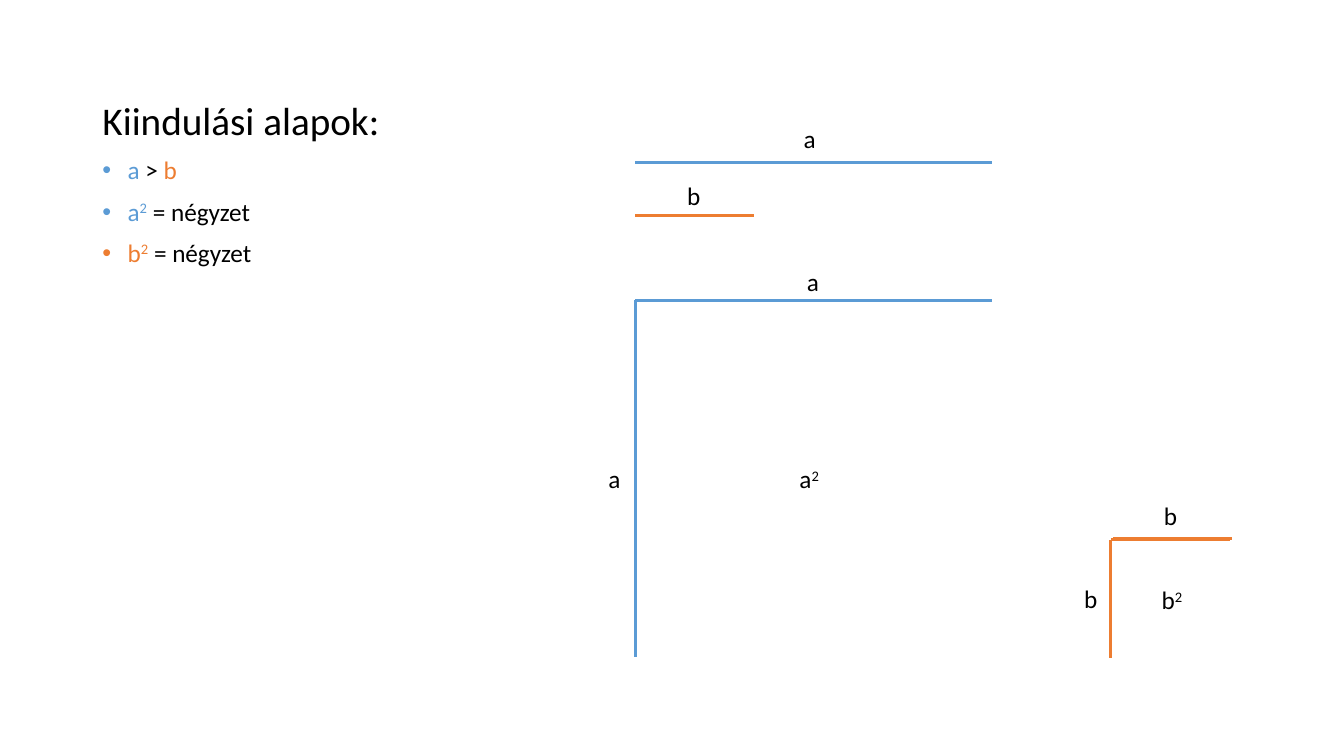
from dataclasses import dataclass

from lxml import etree
from pptx import Presentation
from pptx.dml.color import RGBColor
from pptx.enum.shapes import MSO_CONNECTOR
from pptx.enum.text import MSO_ANCHOR, MSO_AUTO_SIZE, PP_ALIGN
from pptx.oxml.ns import qn
from pptx.util import Pt

STRAIGHT = MSO_CONNECTOR.STRAIGHT
LEFT = PP_ALIGN.LEFT
TOP = MSO_ANCHOR.TOP
NO_FIT, GROW = MSO_AUTO_SIZE.NONE, MSO_AUTO_SIZE.SHAPE_TO_FIT_TEXT
PX = 9525  # EMU in one px, 96 px to the inch


@dataclass(frozen=True)
class Theme:
    font: str = "Calibri"
    black: str = "000000"
    blue: str = "5B9BD5"
    orange: str = "ED7D31"
    heading: int = 28
    text: int = 18
    stroke: int = 2


theme = Theme()


def write(p, text, size=theme.text, color=theme.black, raised=False):
    r = p.add_run()
    r.text = text
    r.font.name = theme.font
    r.font.size = Pt(size)
    r.font.color.rgb = RGBColor.from_string(color)
    if raised:
        r.font._element.set("baseline", "30000")


prs = Presentation()
prs.slide_width, prs.slide_height = 1280 * PX, 720 * PX
s = prs.slides.add_slide(prs.slide_layouts.get_by_name("Title and Content"))
title = s.shapes.title._element
title.getparent().remove(title)

# Starting points
body = s.placeholders[1]
body.left, body.top, body.width, body.height = 88 * PX, 92 * PX, 1104 * PX, 556 * PX
tf = body.text_frame
tf.word_wrap = True
tf.auto_size = NO_FIT
tf.vertical_anchor = TOP

a, b = theme.blue, theme.orange
statements = [
    [("Kiindulási alapok:", theme.heading, theme.black)],
    [("a", theme.text, a), (" > ",), ("b", theme.text, b)],
    [("a", theme.text, a), ("2", theme.text, a, True), (" = négyzet",)],
    [("b", theme.text, b), ("2", theme.text, b, True), (" = négyzet",)],
]
for i, runs in enumerate(statements):
    p = tf.paragraphs[0] if i == 0 else tf.add_paragraph()
    p.alignment = LEFT
    p.line_spacing = 0.9
    p.space_before = Pt(10)
    pPr = p._p.get_or_add_pPr()
    indent = 24 * PX if i else 0
    pPr.set("marL", str(indent))
    pPr.set("indent", str(-indent))
    if i:
        etree.SubElement(pPr, qn("a:buFont"), typeface="Arial")
        etree.SubElement(pPr, qn("a:buChar"), char="•")
    else:
        etree.SubElement(pPr, qn("a:buNone"))
    for run in runs:
        write(p, *run)

# Segments and square sides: start x, start y, run across, run down, colour
A, B = 340, 113
A_X, A_Y = 605, 286
B_X, B_Y = 1058, 514
segments = [
    (A_X, 155, A, 0, a),
    (A_X, 205, B, 0, b),
    (B_X, B_Y, B, 0, b),
    (A_X, A_Y, A, 0, a),
    (A_X, A_Y, 0, A, a),
    (B_X + 2, B_Y - 1, B, 0, b),
    (B_X, B_Y, 0, B, b),
]
for x, y, dx, dy, color in segments:
    line = s.shapes.add_connector(STRAIGHT, x * PX, y * PX, (x + dx) * PX, (y + dy) * PX)
    line.line.color.rgb = RGBColor.from_string(color)
    line.line.width = Pt(theme.stroke)
    etree.SubElement(line._element.spPr, qn("a:effectLst"))

# Labels: letter, power, left, top, width
labels = [
    ("a", "", 756, 113, 31),
    ("b", "", 645, 167, 33),
    ("a", "", 759, 249, 31),
    ("a", "", 570, 437, 31),
    ("b", "", 1023, 551, 33),
    ("a", "2", 752, 437, 39),
    ("b", "2", 1097, 552, 40),
    ("b", "", 1099, 472, 33),
]
for letter, power, x, y, width in labels:
    label = s.shapes.add_textbox(x * PX, y * PX, width * PX, 39 * PX)
    tf = label.text_frame
    tf.word_wrap = False
    tf.auto_size = GROW
    write(tf.paragraphs[0], letter)
    if power:
        write(tf.paragraphs[0], power, raised=True)

prs.save("out.pptx")
